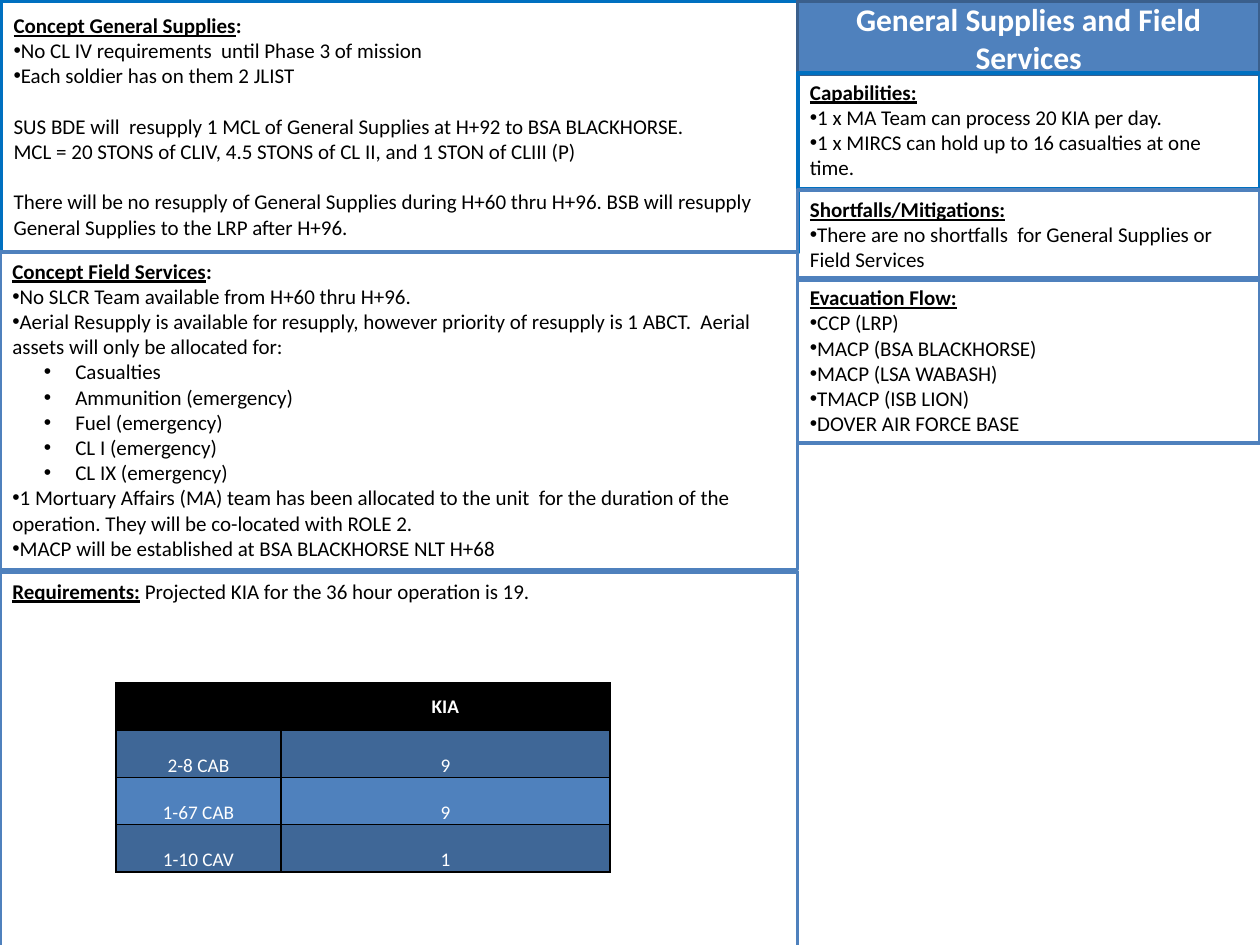
from lxml import etree
from pptx import Presentation
from pptx.dml.color import RGBColor
from pptx.enum import shapes, text
from pptx.oxml import ns
from pptx.util import Inches, Pt

BLACK = RGBColor(0x00, 0x00, 0x00)
WHITE = RGBColor(0xFF, 0xFF, 0xFF)
BLUE = RGBColor(0x4F, 0x81, 0xBD)
BRIGHT_BLUE = RGBColor(0x00, 0x70, 0xC0)
TITLE_EDGE = RGBColor(0x3A, 0x5F, 0x8C)
ROW_BLUE = RGBColor(0x3F, 0x67, 0x97)

LEFT_WIDTH = 6.33
RIGHT_WIDTH = 3.67
BLANK_LINE = 14.4

SUPPLY_BULLETS = ["No CL IV requirements  until Phase 3 of mission",
                  "Each soldier has on them 2 JLIST"]
SUPPLY_NOTES = [
    ("SUS BDE will  resupply 1 MCL of General Supplies at H+92 to BSA BLACKHORSE.", BLANK_LINE),
    ("MCL = 20 STONS of CLIV, 4.5 STONS of CL II, and 1 STON of CLIII (P)", 0),
    ("There will be no resupply of General Supplies during H+60 thru H+96. "
     "BSB will resupply General Supplies to the LRP after H+96.", BLANK_LINE),
]
SERVICE_BULLETS = [
    "No SLCR Team available from H+60 thru H+96.",
    "Aerial Resupply is available for resupply, however priority of resupply is 1 ABCT.  "
    "Aerial assets will only be allocated for:",
]
AERIAL_PRIORITIES = ["Casualties", "Ammunition (emergency)", "Fuel (emergency)",
                     "CL I (emergency)", "CL IX (emergency)"]
MORTUARY_BULLETS = [
    "1 Mortuary Affairs (MA) team has been allocated to the unit  for the duration of the "
    "operation. They will be co-located with ROLE 2.",
    "MACP will be established at BSA BLACKHORSE NLT H+68",
]
CAPABILITIES = ["1 x MA Team can process 20 KIA per day.",
                "1 x MIRCS can hold up to 16 casualties at one time."]
SHORTFALLS = ["There are no shortfalls  for General Supplies or Field Services"]
EVACUATION_STOPS = ["CCP (LRP)", "MACP (BSA BLACKHORSE)", "MACP (LSA WABASH)",
                    "TMACP (ISB LION)", "DOVER AIR FORCE BASE"]
CASUALTIES = [("", "KIA"), ("2-8 CAB", "9"), ("1-67 CAB", "9"), ("1-10 CAV", "1")]
ROW_FILLS = [BLACK, ROW_BLUE, BLUE, ROW_BLUE]


def add_run(paragraph, words, size=12, color=BLACK, bold=False, underline=False):
    run = paragraph.add_run()
    run.text = words
    run.font.name = "Calibri"
    run.font.size = Pt(size)
    run.font.color.rgb = color
    run.font.bold = bold
    run.font.underline = underline


def next_paragraph(frame, align=text.PP_ALIGN.LEFT, before=0):
    first = frame.paragraphs[0]
    paragraph = frame.add_paragraph() if first.runs else first
    paragraph.alignment = align
    paragraph.space_before = Pt(before)
    return paragraph


def add_heading(frame, title, tail=None, **tail_format):
    paragraph = next_paragraph(frame)
    add_run(paragraph, title, bold=True, underline=True)
    if tail:
        add_run(paragraph, tail, **tail_format)


def add_bullets(frame, items, indented=False):
    for item in items:
        paragraph = next_paragraph(frame)
        properties = paragraph._p.get_or_add_pPr()
        if indented:
            paragraph.level = 1
        properties.set("marL", str(Inches(0.5 if indented else 0)))
        properties.set("indent", str(Inches(-0.25 if indented else 0)))
        etree.SubElement(properties, ns.qn("a:buFont"), typeface="Arial")
        etree.SubElement(properties, ns.qn("a:buChar"), char="•")
        add_run(paragraph, item)


def add_panel(slide, left, top, width, height, edge=BLUE, weight=2.25, fill=None):
    panel = slide.shapes.add_shape(shapes.MSO_SHAPE.RECTANGLE, Inches(left), Inches(top),
                                   Inches(width), Inches(height))
    panel.shadow.inherit = False
    if fill is None:
        panel.fill.background()
    else:
        panel.fill.solid()
        panel.fill.fore_color.rgb = fill
    panel.line.color.rgb = edge
    panel.line.width = Pt(weight)
    frame = panel.text_frame
    frame.word_wrap = True
    frame.vertical_anchor = text.MSO_ANCHOR.TOP
    return frame


def add_text(slide, left, top, width, height):
    frame = slide.shapes.add_textbox(Inches(left), Inches(top),
                                     Inches(width), Inches(height)).text_frame
    frame.word_wrap = True
    return frame


def add_borders(cell, color=BLACK, weight=1):
    properties = cell._tc.get_or_add_tcPr()
    for position, side in enumerate(("lnL", "lnR", "lnT", "lnB")):
        border = etree.Element(ns.qn(f"a:{side}"), w=str(Pt(weight)))
        solid = etree.SubElement(border, ns.qn("a:solidFill"))
        etree.SubElement(solid, ns.qn("a:srgbClr"), val=str(color))
        properties.insert(position, border)


def add_casualty_table(slide):
    table = slide.shapes.add_table(len(CASUALTIES), 2, Inches(0.92), Inches(5.42),
                                   Inches(3.92), Inches(1.5)).table
    table.columns[0].width = Inches(1.31)
    table.columns[1].width = Inches(2.61)
    for r, (values, fill) in enumerate(zip(CASUALTIES, ROW_FILLS)):
        is_header = r == 0
        for c, value in enumerate(values):
            cell = table.cell(r, c)
            cell.fill.solid()
            cell.fill.fore_color.rgb = fill
            cell.margin_left = cell.margin_right = cell.margin_top = Inches(0.01)
            cell.margin_bottom = 0
            cell.vertical_anchor = text.MSO_ANCHOR.MIDDLE if is_header else text.MSO_ANCHOR.BOTTOM
            add_borders(cell)
            if value:
                paragraph = next_paragraph(cell.text_frame, align=text.PP_ALIGN.CENTER)
                add_run(paragraph, value, size=11, color=WHITE, bold=is_header)


def add_left_column(slide):
    add_panel(slide, 0.01, 0.01, LEFT_WIDTH, 1.99, edge=BRIGHT_BLUE, weight=2)
    supplies = add_text(slide, 0.01, 0.05, 6.24, 1.92)
    add_heading(supplies, "Concept General Supplies", ":", bold=True)
    add_bullets(supplies, SUPPLY_BULLETS)
    for note, before in SUPPLY_NOTES:
        add_run(next_paragraph(supplies, before=before), note)

    requirements = add_panel(slide, 0, 4.54, LEFT_WIDTH, 3.13)
    add_heading(requirements, "Requirements:", " Projected KIA for the 36 hour operation is 19.")

    services = add_panel(slide, 0, 2, LEFT_WIDTH, 2.52)
    add_heading(services, "Concept Field Services", ":", bold=True)
    add_bullets(services, SERVICE_BULLETS)
    add_bullets(services, AERIAL_PRIORITIES, indented=True)
    add_bullets(services, MORTUARY_BULLETS)
    add_casualty_table(slide)


def add_right_column(slide):
    title = add_panel(slide, LEFT_WIDTH, 0.01, RIGHT_WIDTH, 0.58,
                      edge=TITLE_EDGE, weight=2, fill=BLUE)
    title.vertical_anchor = text.MSO_ANCHOR.MIDDLE
    add_run(next_paragraph(title, align=text.PP_ALIGN.CENTER),
            "General Supplies and Field Services", size=18, color=WHITE, bold=True)

    add_panel(slide, LEFT_WIDTH, 0.58, RIGHT_WIDTH, 0.92, edge=BRIGHT_BLUE, weight=2)
    capabilities = add_text(slide, LEFT_WIDTH, 0.58, RIGHT_WIDTH, 0.91)
    shortfalls = add_panel(slide, LEFT_WIDTH, 1.51, RIGHT_WIDTH, 0.71)
    evacuation = add_panel(slide, LEFT_WIDTH, 2.21, RIGHT_WIDTH, 1.31)
    for frame, heading, items in ((capabilities, "Capabilities:", CAPABILITIES),
                                  (shortfalls, "Shortfalls/Mitigations:", SHORTFALLS),
                                  (evacuation, "Evacuation Flow:", EVACUATION_STOPS)):
        add_heading(frame, heading)
        add_bullets(frame, items)


def main():
    deck = Presentation()
    deck.slide_width = Inches(10)
    deck.slide_height = Inches(7.5)
    slide = deck.slides.add_slide(deck.slide_layouts[6])
    add_left_column(slide)
    add_right_column(slide)
    deck.save("out.pptx")


if __name__ == "__main__":
    main()
